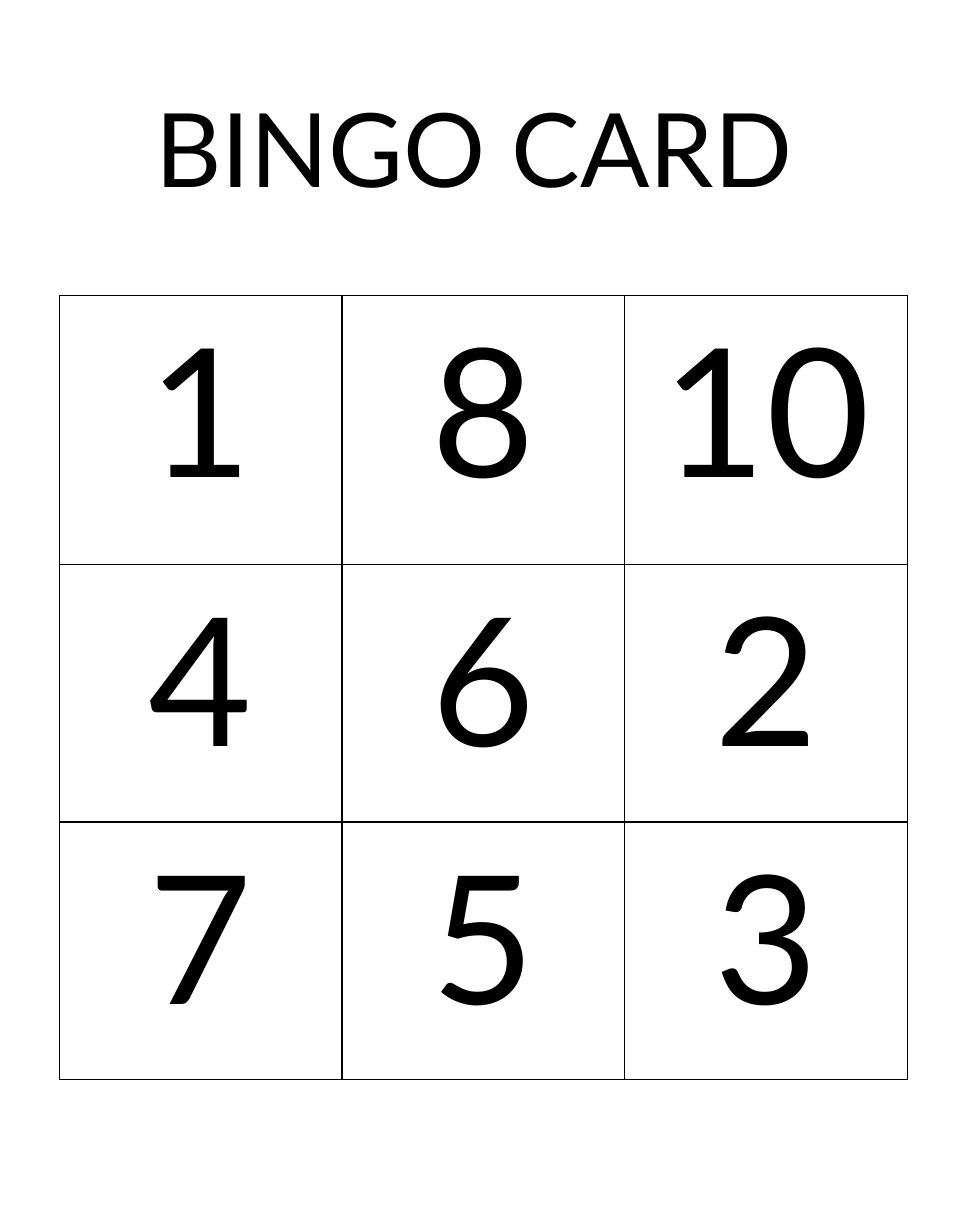
import pptx
import pptx.util
import pptx.dml.color
import pptx.enum.text
import pptx.oxml
import pptx.oxml.ns
from pptx.util import Inches

FONT = "Lato"
INK = "000000"
CARD = [["1", "8", "10"], ["4", "6", "2"], ["7", "5", "3"]]
ROWS = [2.4, 2.3, 2.3]
WIDE = 7.57


def color(code):
    return pptx.dml.color.RGBColor.from_string(code)


def write(frame, text, size):
    para = frame.paragraphs[0]
    para.text = text
    para.alignment = pptx.enum.text.PP_ALIGN.CENTER
    para.font.name = FONT
    para.font.size = pptx.util.Pt(size)
    para.font.color.rgb = color(INK)


def border(cell, width=1):
    props = cell._tc.get_or_add_tcPr()
    space = pptx.oxml.ns.nsdecls("a")
    # Lines come before the fill in the cell properties
    for spot, side in enumerate(("lnL", "lnR", "lnT", "lnB")):
        line = pptx.oxml.parse_xml(
            f'<a:{side} {space} w="{pptx.util.Pt(width)}"><a:solidFill>'
            f'<a:srgbClr val="{INK}"/></a:solidFill></a:{side}>')
        props.insert(spot, line)


def title(slide, text):
    box = slide.shapes.add_textbox(
        Inches(0.53), Inches(0.71), Inches(7.4), Inches(1.21))
    box.text_frame.word_wrap = True
    box.text_frame.auto_size = pptx.enum.text.MSO_AUTO_SIZE.SHAPE_TO_FIT_TEXT
    write(box.text_frame, text, 66)


def grid(slide):
    # Columns share the width equally
    table = slide.shapes.add_table(
        len(CARD), len(CARD[0]), Inches(0.53), Inches(2.64),
        Inches(WIDE), Inches(sum(ROWS))).table
    table.first_row = False
    table.horz_banding = False
    for row, high, nums in zip(table.rows, ROWS, CARD):
        row.height = Inches(high)
        for cell, num in zip(row.cells, nums):
            cell.fill.background()
            border(cell)
            write(cell.text_frame, num, 115)


def main():
    deck = pptx.Presentation()
    # Page of 8 8/15 by 11 inches
    deck.slide_width = Inches(8 + 8 / 15)
    deck.slide_height = Inches(11)
    slide = deck.slides.add_slide(deck.slide_layouts[6])
    # Number grid, then heading
    grid(slide)
    title(slide, "BINGO CARD")
    deck.save("out.pptx")


if __name__ == "__main__":
    main()
